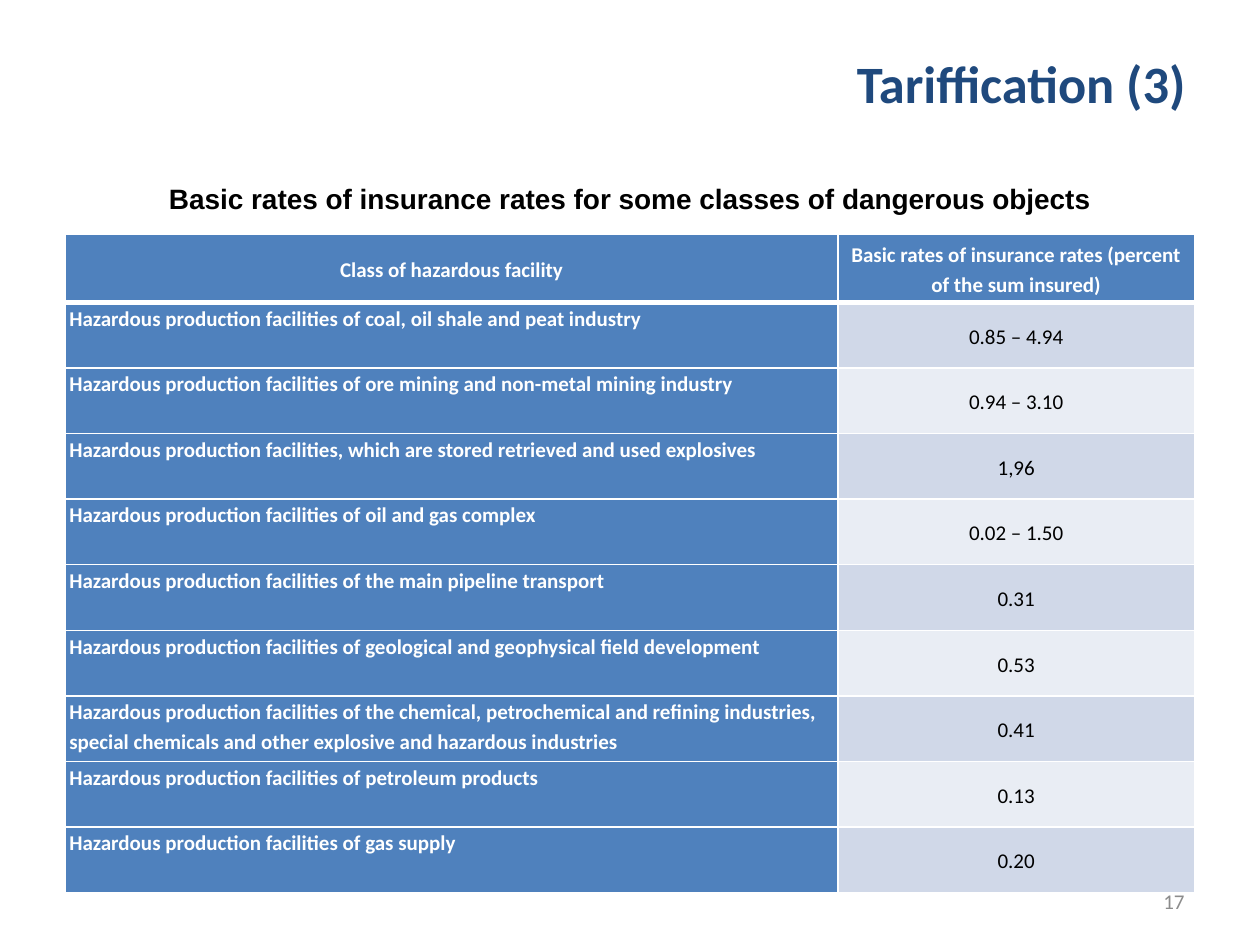
"""Build the slide of basic insurance rates by class of hazardous facility."""
from lxml.etree import SubElement
from pptx import Presentation
from pptx.dml.color import RGBColor
from pptx.enum.text import MSO_ANCHOR as Anchor, PP_ALIGN as Align
from pptx.oxml.ns import qn
from pptx.util import Inches, Pt

WHITE, BLACK, BLUE, NAVY, GREY = "FFFFFF", "000000", "4F81BD", "1F497D", "8C8C8C"
BANDS = ["D0D8E8", "E9EDF4"]
RATES = [
    ("Class of hazardous facility", "Basic rates of insurance rates (percent of the sum insured)"),
    ("Hazardous production facilities of coal, oil shale and peat industry", "0.85 – 4.94"),
    ("Hazardous production facilities of ore mining and non-metal mining industry", "0.94 – 3.10"),
    ("Hazardous production facilities, which are stored retrieved and used explosives", "1,96"),
    ("Hazardous production facilities of oil and gas complex", "0.02 – 1.50"),
    ("Hazardous production facilities of the main pipeline transport", "0.31"),
    ("Hazardous production facilities of geological and geophysical field development", "0.53"),
    ("Hazardous production facilities of the chemical, petrochemical and refining industries, "
     "special chemicals and other explosive and hazardous industries", "0.41"),
    ("Hazardous production facilities of petroleum products", "0.13"),
    ("Hazardous production facilities of gas supply", "0.20"),
]


def rgb(code):
    return RGBColor.from_string(code)


def write(frame, words, align, size, face, color, bold):
    frame.text = words
    frame.word_wrap = True
    line = frame.paragraphs[0]
    line.alignment = align
    font = line.runs[0].font
    font.size, font.name, font.bold = Pt(size), face, bold
    font.color.rgb = rgb(color)
    return line


deck = Presentation()
deck.slide_width, deck.slide_height = Inches(10), Inches(7.5)
wide, high = deck.slide_width / 100, deck.slide_height / 100
slide = deck.slides.add_slide(deck.slide_layouts[6])

for left, top, width, height, anchor, *wording in [
    (20.1, 4.27, 75, 8.93, Anchor.MIDDLE, "Tariffication (3)", Align.RIGHT, 30, "Calibri", NAVY, True),
    (71.7, 92.67, 23.3, 5.33, Anchor.MIDDLE, "17", Align.RIGHT, 12, "Calibri", GREY, False),
    (0, 18.53, 100, 4.93, Anchor.TOP,
     "Basic rates of insurance rates for some classes of dangerous objects",
     Align.CENTER, 16, "Arial", BLACK, True),
]:
    place = [int(left * wide), int(top * high), int(width * wide), int(height * high)]
    caption = slide.shapes.add_textbox(*place).text_frame
    write(caption, *wording)
    caption.vertical_anchor = anchor

header_height, row_height = int(7.2 * high), int(6.94 * high)
class_width, rate_width = int(61.3 * wide), int(28.3 * wide)
table = slide.shapes.add_table(
    len(RATES), 2, int(5.2 * wide), int(24.8 * high),
    class_width + rate_width, header_height + row_height * (len(RATES) - 1)).table
table.columns[0].width, table.columns[1].width = class_width, rate_width

for row, entry in enumerate(RATES):
    table.rows[row].height = row_height if row else header_height
    for column, words in enumerate(entry):
        cell = table.cell(row, column)
        is_class, is_rate = row and not column, row and column
        cell.margin_left = cell.margin_right = Inches(0.03)
        cell.margin_top = cell.margin_bottom = 0
        cell.vertical_anchor = Anchor.TOP if is_class else Anchor.MIDDLE
        line = write(cell.text_frame, words, Align.LEFT if is_class else Align.CENTER,
                     12, "Calibri", BLACK if is_rate else WHITE, not is_rate)
        line.line_spacing = 1.15
        for side in ("lnL", "lnR", "lnT", "lnB"):
            thick = (row, side) in [(0, "lnB"), (1, "lnT")]
            border = SubElement(cell._tc.get_or_add_tcPr(), qn(f"a:{side}"), w=str(Pt(3 if thick else 1)))
            SubElement(SubElement(border, qn("a:solidFill")), qn("a:srgbClr"), val=WHITE)
        cell.fill.solid()
        cell.fill.fore_color.rgb = rgb(BANDS[(row - 1) % 2] if is_rate else BLUE)

deck.save("out.pptx")
